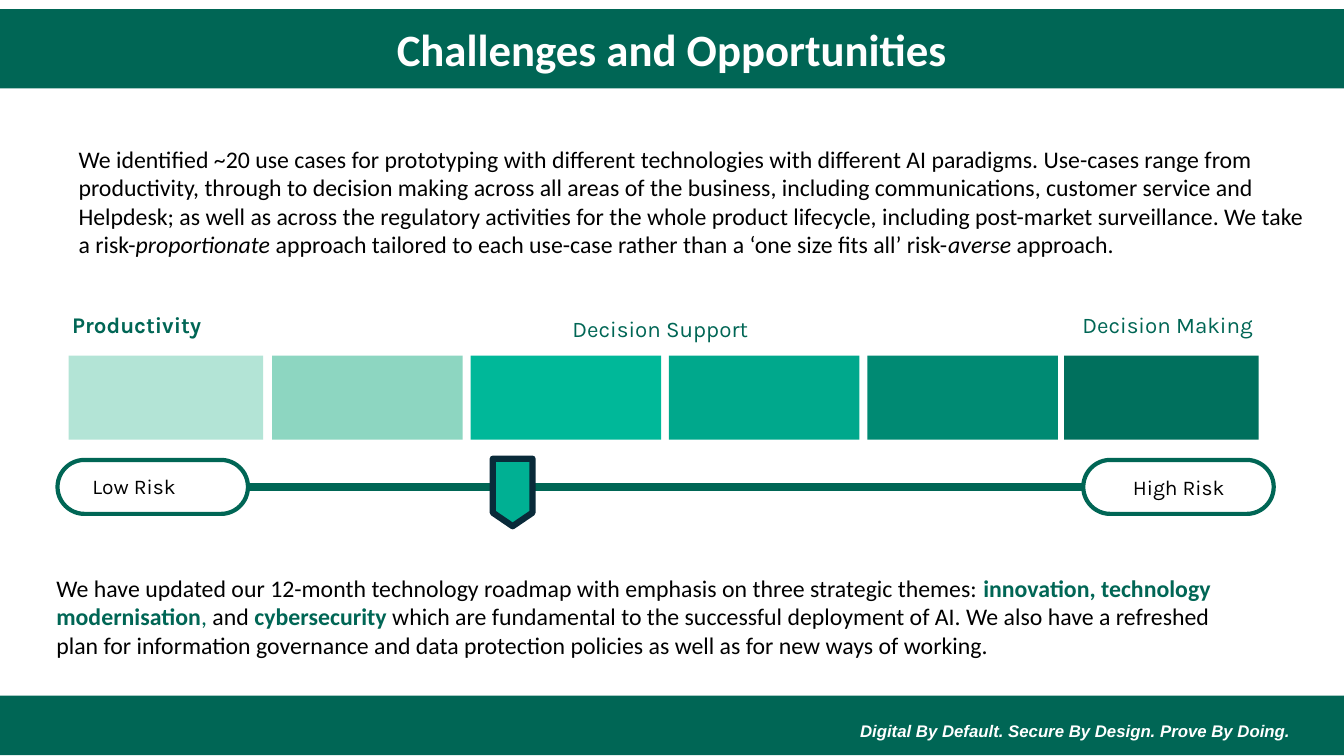
from lxml import etree
from pptx import Presentation
from pptx.dml.color import RGBColor
from pptx.enum.shapes import MSO_CONNECTOR, MSO_SHAPE
from pptx.enum.text import MSO_ANCHOR, PP_ALIGN
from pptx.oxml.ns import qn
from pptx.util import Cm, Pt

RECT, PILL = MSO_SHAPE.RECTANGLE, MSO_SHAPE.ROUNDED_RECTANGLE
POINTER = MSO_SHAPE.FLOWCHART_OFFPAGE_CONNECTOR
STRAIGHT = MSO_CONNECTOR.STRAIGHT
LEFT, CENTER, RIGHT = PP_ALIGN.LEFT, PP_ALIGN.CENTER, PP_ALIGN.RIGHT
TOP, MIDDLE = MSO_ANCHOR.TOP, MSO_ANCHOR.MIDDLE
SITE_LEFT, SITE_RIGHT = 1, 3

GREEN, WHITE, BLACK = "006655", "FFFFFF", "000000"
TITLE = {"name": "Calibri", "size": Pt(32), "bold": True, "color": WHITE}
BODY = {"name": "Calibri", "size": Pt(17), "color": BLACK}
STAGE = {"name": "Karla", "size": Pt(16), "color": GREEN}
RISK = {"name": "Karla", "size": Pt(15), "color": BLACK}
MOTTO = {"name": "Arial", "size": Pt(12), "bold": True, "italic": True, "color": WHITE}
ITALIC = {"italic": True}
THEME = {"bold": True, "color": GREEN}


def rgb(value):
    return RGBColor.from_string(value)


class RiskSlide:
    def __init__(self, deck):
        self.slide = deck.slides.add_slide(deck.slide_layouts[6])

    def shape(self, kind, box, fill=None, line=None, width=0):
        item = self.slide.shapes.add_shape(kind, *map(Cm, box))
        item.shadow.inherit = False
        if fill:
            item.fill.solid()
            item.fill.fore_color.rgb = rgb(fill)
        else:
            item.fill.background()
        if line:
            item.line.color.rgb = rgb(line)
            item.line.width = Pt(width)
        else:
            item.line.fill.background()
        return item

    def fill_text(self, frame, runs, style, align, anchor=TOP):
        frame.word_wrap = True
        frame.vertical_anchor = anchor
        paragraph = frame.paragraphs[0]
        paragraph.alignment = align
        for words, changes in runs:
            run = paragraph.add_run()
            run.text = words
            for key, value in {**style, **changes}.items():
                if key == "color":
                    run.font.color.rgb = rgb(value)
                else:
                    setattr(run.font, key, value)

    def text(self, box, runs, style, align=LEFT):
        frame = self.slide.shapes.add_textbox(*map(Cm, box)).text_frame
        self.fill_text(frame, runs, style, align)

    def banner(self, box, words, style):
        frame = self.shape(RECT, box, GREEN).text_frame
        for side in ("left", "top", "right", "bottom"):
            setattr(frame, f"margin_{side}", 0)
        self.fill_text(frame, [(words, {})], style, CENTER, MIDDLE)

    def pill(self, box):
        item = self.shape(PILL, box, line=GREEN, width=3)
        item.adjustments[0] = 0.5
        return item

    def link(self, start, end, color, width):
        track = self.slide.shapes.add_connector(STRAIGHT, 0, 0, 0, 0)
        track.begin_connect(start, SITE_RIGHT)
        track.end_connect(end, SITE_LEFT)
        track.line.color.rgb = rgb(color)
        track.line.width = Pt(width)
        etree.SubElement(track._element.spPr, qn("a:effectLst"))


def main():
    deck = Presentation()
    deck.slide_width, deck.slide_height = Cm(33.87), Cm(19.05)
    page = RiskSlide(deck)

    page.banner((0, 0.23, 33.87, 2), "Challenges and Opportunities", TITLE)
    page.text((1.73, 3.51, 31.42, 4.24), [
        ("We identified ~20 use cases for prototyping with different technologies with "
         "different AI paradigms. Use-cases range from productivity, through to decision "
         "making across all areas of the business, including communications, customer "
         "service and Helpdesk; as well as across the regulatory activities for the whole "
         "product lifecycle, including post-market surveillance. We take a risk-", {}),
        ("proportionate", ITALIC),
        (" approach tailored to each use-case rather than a ‘one size fits all’ risk-", {}),
        ("averse", ITALIC),
        (" approach.", {}),
    ], BODY)

    shades = ["8DD6C1", "00B899", "00A88C", "008A73"]
    tiles = [(1.73, 4.9, "B3E4D6")]
    tiles += [(6.86 + 5 * step, 4.8, shade) for step, shade in enumerate(shades)]
    tiles += [(26.82, 4.9, "00705D")]
    for left, width, shade in tiles:
        page.shape(RECT, (left, 8.96, width, 2.12), shade)

    labels = [
        ("Productivity", (1.57, 7.72, 4.22, 1.02), STAGE, {"bold": True}, LEFT),
        ("Decision Making", (26.31, 7.72, 5.51, 1.02), STAGE, {}, RIGHT),
        ("Decision Support", (13.77, 7.82, 5.74, 1.02), STAGE, {}, CENTER),
        ("Low Risk", (2.08, 11.81, 2.9, 0.89), RISK, {}, LEFT),
        ("High Risk", (27.94, 11.83, 3.17, 0.89), RISK, {}, RIGHT),
    ]
    for words, box, style, changes, align in labels:
        page.text(box, [(words, changes)], style, align)

    low, high = [page.pill((left, 11.59, 4.8, 1.36)) for left in (1.45, 27.3)]
    page.link(low, high, GREEN, 6)
    page.shape(POINTER, (12.42, 11.56, 1, 1.7), "00B093", "092A39", 4.5)

    page.text((1.17, 14.32, 30.56, 2.45), [
        ("We have updated our 12-month technology roadmap with emphasis on three "
         "strategic themes: ", {}),
        ("innovation, technology modernisation", THEME),
        (", ", {"color": GREEN}),
        ("and ", {}),
        ("cybersecurity", THEME),
        (" which are fundamental to the successful deployment of AI. We also have a "
         "refreshed plan for information governance and data protection policies as well "
         "as for new ways of working.", {}),
    ], BODY)

    page.shape(RECT, (0, 17.53, 33.87, 1.5), GREEN)
    page.text((20.98, 18.03, 11.79, 0.76), [
        ("Digital By Default. Secure By Design. Prove By Doing.", {}),
    ], MOTTO, RIGHT)
    deck.save("out.pptx")


if __name__ == "__main__":
    main()
